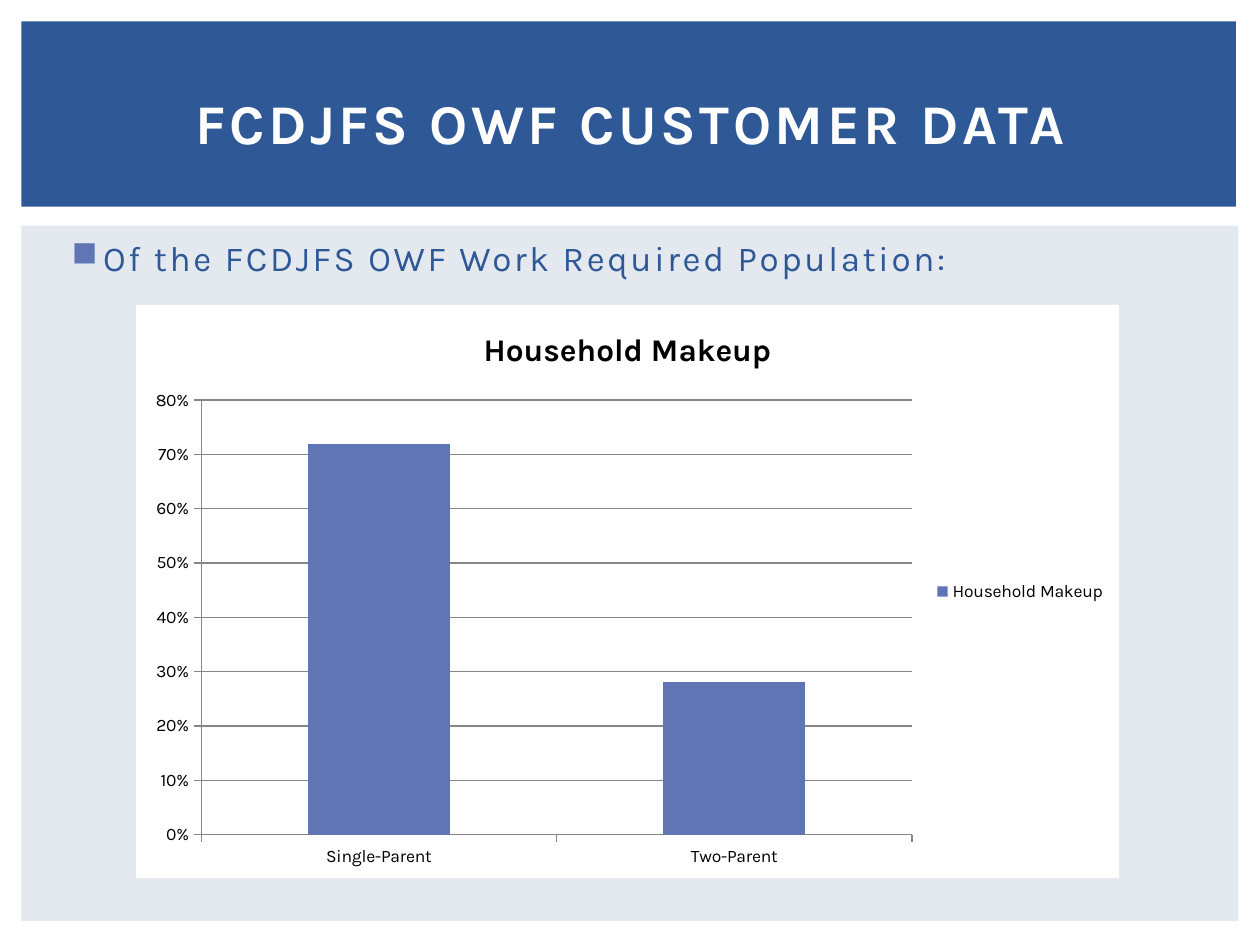
from lxml import etree
from pptx import Presentation
from pptx import util as u
from pptx.chart.data import CategoryChartData
from pptx.dml.color import RGBColor
from pptx.enum import chart as c, shapes, text
from pptx.oxml.ns import qn

FONT = "Karla"
BLUE, ACCENT, PALE, WHITE, BLACK, GRAY = (
    "2F5897", "6076B4", "E4E9EF", "FFFFFF", "000000", "868686")
SLIDE_SIZE = 10, 7.5

TITLE = "FCDJFS OWF CUSTOMER DATA"
BULLET = "Of the FCDJFS OWF Work Required Population:"
HOUSEHOLDS = {"Single-Parent": 0.72, "Two-Parent": 0.28}
CHART_NAME = "Household Makeup"

# left, top, width, height in inches
PANELS = [((0.17, 1.79, 9.66, 5.52), PALE), ((0.17, 0.17, 9.64, 1.47), BLUE)]
TITLE_BOX = 0.42, 0.39, 9.17, 1.15
BODY_BOX = 0.42, 1.83, 9.19, 4.82
CHART_BOX = 1.08, 2.42, 7.8, 4.55

TITLE_FONT = {"size": u.Pt(32), "bold": True}
BODY_FONT = {"size": u.Pt(20)}
CHART_TITLE_FONT = {"size": u.Pt(18), "bold": True}
CHART_FONT = {"size": u.Pt(10), "bold": False}


def inches(box):
    return [u.Inches(value) for value in box]


def rgb(value):
    return RGBColor.from_string(value)


def paint(fill, color):
    fill.solid()
    fill.fore_color.rgb = rgb(color)


def set_all(target, values):
    for name, value in values.items():
        setattr(target, name, value)


def set_font(font, values, color):
    set_all(font, {"name": FONT, **values})
    font.color.rgb = rgb(color)


def write(frame, words, font_values, color, spacing):
    """Write one run; spacing between letters is in points."""
    set_all(frame, {"word_wrap": True, "auto_size": text.MSO_AUTO_SIZE.NONE})
    paragraph = frame.paragraphs[0]
    run = paragraph.add_run()
    run.text = words
    set_font(run.font, font_values, color)
    run.font._element.set("spc", str(int(spacing * 100)))
    return paragraph


def add_bullet(paragraph, mark, color, margin, indent):
    properties = paragraph._p.get_or_add_pPr()
    properties.set("marL", str(u.Inches(margin)))
    properties.set("indent", str(u.Inches(indent)))
    bullet_color = etree.SubElement(properties, qn("a:buClr"))
    etree.SubElement(bullet_color, qn("a:srgbClr"), val=color)
    etree.SubElement(properties, qn("a:buChar"), char=mark)


def add_panels(slide):
    for box, color in PANELS:
        panel = slide.shapes.add_shape(shapes.MSO_SHAPE.RECTANGLE, *inches(box))
        panel.shadow.inherit = False
        paint(panel.fill, color)
        panel.line.fill.background()


def add_title(slide):
    title = slide.shapes.title
    slide.shapes._spTree.append(title._element)  # in front of the panels
    set_all(title, dict(zip(("left", "top", "width", "height"), inches(TITLE_BOX))))
    title.text_frame.vertical_anchor = text.MSO_ANCHOR.MIDDLE
    paragraph = write(title.text_frame, TITLE, TITLE_FONT, WHITE, 2)
    paragraph.alignment = text.PP_ALIGN.CENTER


def add_body(slide):
    body = slide.shapes.add_textbox(*inches(BODY_BOX))
    paragraph = write(body.text_frame, BULLET, BODY_FONT, BLUE, 1.5)
    paragraph.space_before = u.Pt(4)
    add_bullet(paragraph, "■", ACCENT, 0.3, -0.25)


def add_household_chart(slide):
    data = CategoryChartData(number_format="0%")
    data.categories = list(HOUSEHOLDS)
    data.add_series(CHART_NAME, list(HOUSEHOLDS.values()))
    chart = slide.shapes.add_chart(
        c.XL_CHART_TYPE.COLUMN_CLUSTERED, *inches(CHART_BOX), data).chart
    set_font(chart.font, CHART_FONT, BLACK)

    chart.has_title = True
    chart.chart_title.include_in_layout = False
    chart.chart_title.text_frame.text = CHART_NAME
    title_run = chart.chart_title.text_frame.paragraphs[0].runs[0]
    set_font(title_run.font, CHART_TITLE_FONT, BLACK)

    chart.has_legend = True
    set_all(chart.legend, {"position": c.XL_LEGEND_POSITION.RIGHT,
                           "include_in_layout": False})

    plot = chart.plots[0]
    set_all(plot, {"gap_width": 150, "vary_by_categories": False})
    series = plot.series[0]
    series.invert_if_negative = False
    paint(series.format.fill, ACCENT)

    values = chart.value_axis
    set_all(values, {"minimum_scale": 0, "maximum_scale": 0.8, "major_unit": 0.1,
                     "has_major_gridlines": True})
    set_all(values.tick_labels, {"number_format": "0%",
                                 "number_format_is_linked": False})
    for axis in (chart.category_axis, values):
        axis.major_tick_mark = c.XL_TICK_MARK.OUTSIDE
    for part in (chart.category_axis, values, values.major_gridlines):
        part.format.line.color.rgb = rgb(GRAY)
        part.format.line.width = u.Pt(0.75)

    # The chart's own background has no public fill property.
    background = etree.Element(qn("c:spPr"))
    fill = etree.SubElement(background, qn("a:solidFill"))
    etree.SubElement(fill, qn("a:srgbClr"), val=WHITE)
    line = etree.SubElement(background, qn("a:ln"))
    etree.SubElement(line, qn("a:noFill"))
    chart._chartSpace.chart.addnext(background)


def main():
    presentation = Presentation()
    presentation.slide_width, presentation.slide_height = inches(SLIDE_SIZE)
    slide = presentation.slides.add_slide(presentation.slide_layouts[5])
    paint(slide.background.fill, WHITE)
    add_panels(slide)
    add_body(slide)
    add_title(slide)
    add_household_chart(slide)
    presentation.save("out.pptx")


if __name__ == "__main__":
    main()
